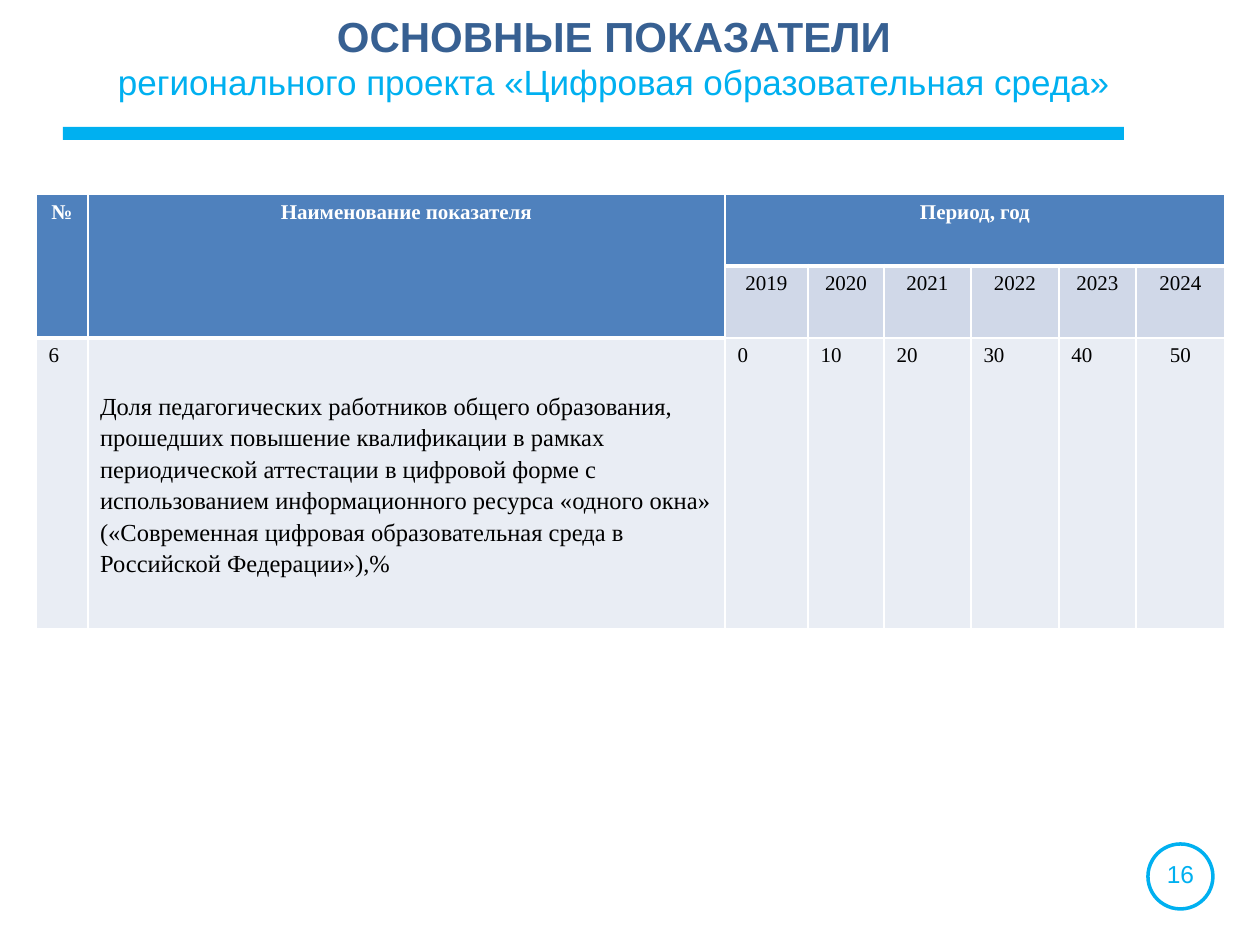
"""Build the slide with the key indicators of the regional project."""
import pptx
import pptx.util
import pptx.oxml
import pptx.dml.color
import pptx.enum.shapes
import pptx.enum.text

RGB = pptx.dml.color.RGBColor
SKY = RGB(0x00, 0xB0, 0xF0)
NAVY = RGB(0x37, 0x60, 0x92)
BLUE = RGB(0x4F, 0x81, 0xBD)
MIST = RGB(0xD0, 0xD8, 0xE8)
PALE = RGB(0xE9, 0xED, 0xF4)
WHITE = RGB(0xFF, 0xFF, 0xFF)
BLACK = RGB(0x00, 0x00, 0x00)
Pt = pptx.util.Pt
KIND = pptx.enum.shapes.MSO_SHAPE
ALIGN = pptx.enum.text.PP_ALIGN
ANCHOR = pptx.enum.text.MSO_ANCHOR
NS = "http://schemas.openxmlformats.org/drawingml/2006/main"


def px(*nums):
    return [round(num * 914400 / 126) for num in nums]


def style(para, name, size, color, bold=False, align=ALIGN.CENTER):
    para.alignment = align
    font = para.font
    font.name, font.size, font.bold = name, Pt(size), bold
    font.color.rgb = color


deck = pptx.Presentation()
deck.slide_width, deck.slide_height = px(1260, 945)
slide = deck.slides.add_slide(deck.slide_layouts[5])
shapes = slide.shapes

bar = shapes.add_shape(KIND.RECTANGLE, *px(63, 127, 1061, 13))
bar.shadow.inherit = False
bar.fill.solid()
bar.fill.fore_color.rgb = SKY
bar.line.fill.background()

ring = shapes.add_shape(KIND.OVAL, *px(1148, 844, 65, 65))
ring.shadow.inherit = False
ring.fill.background()
ring.line.color.rgb = SKY
ring.line.width = Pt(2)

page = shapes.add_textbox(*px(1144, 853, 73, 43)).text_frame
page.word_wrap = True
page.text = "16"
style(page.paragraphs[0], "Arial", 14, SKY)

title = shapes.title
title.left, title.top, title.width, title.height = px(94, 0, 1040, 127)
frame = title.text_frame
frame.word_wrap = True
frame.auto_size = pptx.enum.text.MSO_AUTO_SIZE.NONE
frame.vertical_anchor = ANCHOR.TOP
frame.margin_top = px(10)[0]
frame.text = "ОСНОВНЫЕ ПОКАЗАТЕЛИ\nрегионального проекта «Цифровая образовательная среда»"
head, sub = frame.paragraphs
style(head, "Arial", 24, NAVY, True)
style(sub, "Arial", 20, SKY)
for para in (head, sub):
    para.space_before = Pt(0)

goal = (
    "Доля педагогических работников общего образования, прошедших повышение "
    "квалификации в рамках периодической аттестации в цифровой форме с "
    "использованием информационного ресурса «одного окна» («Современная цифровая "
    "образовательная среда в Российской Федерации»),%"
)
rows = [
    ["№", "Наименование показателя", "Период, год"] + [""] * 5,
    ["", ""] + [str(year) for year in range(2019, 2025)],
    ["6", goal] + [str(rate) for rate in range(0, 60, 10)],
]
wide = [52, 637, 83, 76, 87, 88, 77, 89]
high = [72, 72, 291]
table = shapes.add_table(3, 8, *px(36, 194, sum(wide), sum(high))).table
for col, size in zip(table.columns, px(*wide)):
    col.width = size
for row, size in zip(table.rows, px(*high)):
    row.height = size

for r, row in enumerate(rows):
    for c, text in enumerate(row):
        cell = table.cell(r, c)
        top = r == 0 or (r == 1 and c < 2)
        props = cell._tc.get_or_add_tcPr()
        for side in "LRTB":
            line = 3 if top and side == "B" else 1
            props.append(pptx.oxml.parse_xml(
                f'<a:ln{side} xmlns:a="{NS}" w="{Pt(line)}"><a:solidFill>'
                f'<a:srgbClr val="{WHITE}"/></a:solidFill></a:ln{side}>'))
        cell.fill.solid()
        cell.fill.fore_color.rgb = BLUE if top else MIST if r == 1 else PALE
        if text:
            cell.text = text
            left = r == 2 and c < 7
            style(cell.text_frame.paragraphs[0], "Times New Roman",
                  14 if text == goal else 12, WHITE if top else BLACK, top,
                  ALIGN.LEFT if left else ALIGN.CENTER)

for c in (0, 1):
    table.cell(0, c).merge(table.cell(1, c))
table.cell(0, 2).merge(table.cell(0, 7))

cell = table.cell(2, 1)
cell.vertical_anchor = ANCHOR.MIDDLE
cell.margin_left = cell.margin_right = px(2)[0]
cell.margin_top = cell.margin_bottom = 0
para = cell.text_frame.paragraphs[0]
para.line_spacing = Pt(18)
para._p.get_or_add_pPr().set("marL", str(px(10)[0]))

deck.save("out.pptx")
